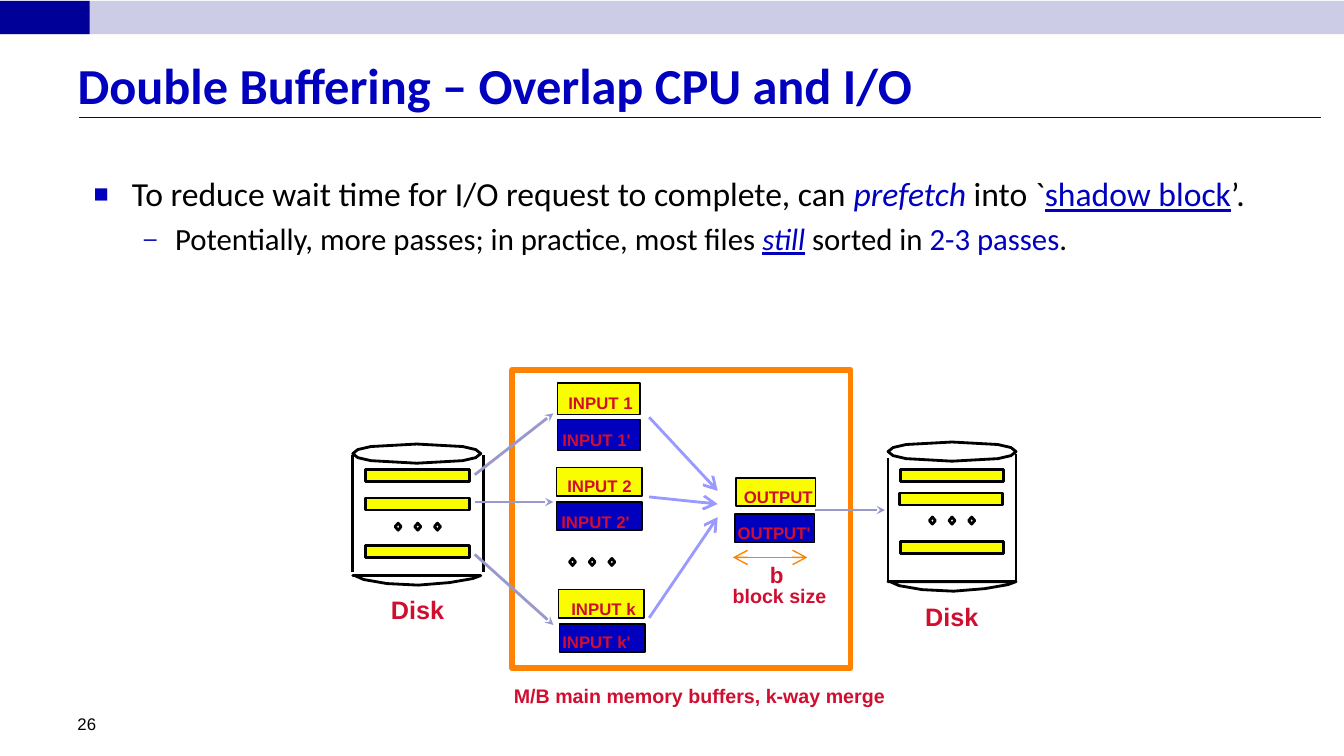
import pptx
import pptx.dml.color
import pptx.enum.shapes
import pptx.enum.text
import pptx.oxml
import pptx.oxml.ns
import pptx.util
from dataclasses import dataclass


@dataclass(frozen=True)
class Theme:
    blue: str = "0000BE"
    navy: str = "000099"
    band: str = "CCCCE6"
    yellow: str = "FAFD00"
    red: str = "CF0E30"
    orange: str = "FF8200"
    black: str = "000000"
    transfer: str = "9999CC"
    merge: str = "9999FF"
    text_font: str = "Calibri"
    label_font: str = "Arial"
    title_size: int = 36
    small: int = 12
    medium: int = 14
    large: int = 18


THEME = Theme()
CELL = 91440  # the grid has square cells, ten to the inch
COLUMNS, ROWS = 133.33, 75

# Content; every place and size is in columns and rows
TITLE = "Double Buffering – Overlap CPU and I/O"
PLAIN = {"color": THEME.black}
KEY = {"color": THEME.blue}
BULLETS = [
    {"mark": "■", "size": 24, "indent": 3.8, "hanging": 3.8, "runs": [
        ("To reduce wait time for I/O request to complete, can ", PLAIN),
        ("prefetch", KEY | {"italic": True}),
        (" into `", PLAIN),
        ("shadow block", KEY | {"underline": True}),
        ("’.", PLAIN)]},
    {"mark": "–", "size": 22, "indent": 8.1, "hanging": 3.1, "runs": [
        ("Potentially, more passes; in practice, most files ", PLAIN),
        ("still", KEY | {"italic": True, "underline": True}),
        (" sorted in ", PLAIN),
        ("2-3 passes", KEY),
        (".", PLAIN)]},
]
# Buffer pair: name, box width and height, then box and label corners of
# the working buffer and of its shadow
BUFFERS = [
    ("INPUT 1", 8.2, 3.1, (55.3, 38), (55.4, 38.5), (55.3, 41.6), (54.8, 42.1)),
    ("INPUT 2", 8.5, 2.8, (55.2, 46.4), (55.3, 46.7), (55.2, 49.8), (54.7, 50.3)),
    ("INPUT k", 8.5, 2.8, (55.4, 58.5), (55.7, 58.9), (55.5, 61.9), (54.8, 62.2)),
    ("OUTPUT", 7.9, 2.8, (73, 47.4), (72.8, 47.8), (72.9, 51), (72.2, 51.4)),
]
LABEL_WIDTHS = {"INPUT": (8.4, 8.9), "OUTPUT": (8.9, 9.3)}
DISKS = [
    {"left": 35, "lid": 45, "base": 57.1, "walls": [(35, 45.1, 56.7), (48, 45.1, 56.7)],
     "records": [(36.3, 46.6), (36.3, 49.4), (36.3, 54.1)],
     "dots": (39.2, 51.9), "label": (37.8, 58.5)},
    {"left": 88.1, "lid": 44.8, "base": 57.7, "walls": [(88.1, 45.4, 57.6), (100.8, 45, 57.6)],
     "records": [(89.3, 46.6), (89.2, 48.9), (89.3, 53.7)],
     "dots": (92.2, 51.3), "label": (90.8, 59.2)},
]
LID_EDGE = [(12.7, 0), (12.2, 0.4), (10.9, 0.7), (6.35, 0.95), (1.8, 0.7), (0.5, 0.4), (0, 0)]
BASE_EDGE = [(0, 0), (0.2, 0), (1.1, 0.4), (3.4, 0.8), (6.5, 0.95),
             (9.6, 0.7), (11.9, 0.3), (12.7, 0)]
INPUT_DOTS = (56.5, 55.4)
MEMORY = (50.8, 36.7, 33.6, 29.6)
TRANSFERS = [(47.1, 47.1, 54.9, 41), (47.1, 49.8, 54.9, 49.8),
             (47.1, 55, 54.9, 62), (80.9, 50.6, 87.8, 50.6)]
MERGES = [(64.4, 41.4, 71.2, 48.7), (64.4, 49.3, 71.2, 50), (64.4, 61.3, 71.2, 51.3)]
BLOCK_WIDTH = (72.7, 55.3, 80.1, 55.3)
CAPTIONS = [
    ("block size", (71.7, 57.4, 11.3, 3.3), THEME.medium),
    ("b", (75.4, 55.2, 3.4, 3.7), 16),
    ("M/B main memory buffers, k-way merge", (50, 67.4, 39, 3.3), THEME.medium),
]
PAGE_NUMBER = ("26", (6.7, 68.3, 31.1, 5))


def cells(*values):
    return [pptx.util.Emu(round(value * CELL)) for value in values]


def rgb(color):
    return pptx.dml.color.RGBColor.from_string(color)


def add_xml(parent, tag, **attributes):
    element = pptx.oxml.parse_xml(f"<a:{tag} {pptx.oxml.ns.nsdecls('a')}/>")
    for name, value in attributes.items():
        element.set(name, str(value))
    parent.append(element)
    return element


def paint(shape, fill, line, weight):
    shape.shadow.inherit = False
    if fill:
        shape.fill.solid()
        shape.fill.fore_color.rgb = rgb(fill)
    else:
        shape.fill.background()
    if line:
        shape.line.color.rgb = rgb(line)
        shape.line.width = pptx.util.Pt(weight)
    else:
        shape.line.fill.background()


def add_box(slide, place, fill=None, line=THEME.black, weight=2, kind="RECTANGLE"):
    preset = getattr(pptx.enum.shapes.MSO_SHAPE, kind)
    paint(slide.shapes.add_shape(preset, *cells(*place)), fill, line, weight)


def add_outline(slide, points):
    corners = [cells(*point) for point in points]
    builder = slide.shapes.build_freeform(*corners[0], scale=1.0)
    builder.add_line_segments(corners[1:], close=True)
    paint(builder.convert_to_shape(), None, THEME.black, 2)


def add_line(slide, ends, color, weight, **arrowheads):
    connector = slide.shapes.add_connector(
        pptx.enum.shapes.MSO_CONNECTOR.STRAIGHT, *cells(*ends))
    connector.line.color.rgb = rgb(color)
    connector.line.width = pptx.util.Pt(weight)
    properties = connector._element.spPr
    for tag, kind in arrowheads.items():
        size = "med" if kind == "stealth" else "lg"
        add_xml(properties.find(pptx.oxml.ns.qn("a:ln")), tag, type=kind, w=size, len=size)
    add_xml(properties, "effectLst")


def add_run(paragraph, text, font, size, color, **styles):
    run = paragraph.add_run()
    run.text = text
    run.font.color.rgb = rgb(color)
    styles |= {"name": font, "size": pptx.util.Pt(size)}
    for name, value in styles.items():
        setattr(run.font, name, value)


def add_text(slide, place, wrap=True):
    frame = slide.shapes.add_textbox(*cells(*place)).text_frame
    frame.word_wrap = wrap
    if not wrap:
        frame.auto_size = pptx.enum.text.MSO_AUTO_SIZE.SHAPE_TO_FIT_TEXT
    return frame


def add_label(slide, text, place, size):
    frame = add_text(slide, place, wrap=False)
    add_run(frame.paragraphs[0], text, THEME.label_font, size, THEME.red, bold=True)


def add_dots(slide, left, top):
    for index in range(3):
        add_box(slide, (left + 1.95 * index, top, 0.6, 0.7), kind="DIAMOND")


def add_heading(slide):
    add_box(slide, (0, 0.1, COLUMNS, 3.3), THEME.band, None)
    add_box(slide, (0, 0.1, 8.9, 3.3), THEME.navy, None)
    add_line(slide, (7.8, 11.7, 131.1, 11.7), THEME.navy, 0.75)
    title = slide.shapes.title
    title.left, title.top, title.width, title.height = cells(6.7, 2.3, 98.3, 12.1)
    title.text_frame.vertical_anchor = pptx.enum.text.MSO_ANCHOR.MIDDLE
    paragraph = title.text_frame.paragraphs[0]
    paragraph.alignment = pptx.enum.text.PP_ALIGN.LEFT
    add_run(paragraph, TITLE, THEME.text_font, THEME.title_size, THEME.blue, bold=True)


def add_bullets(slide):
    frame = add_text(slide, (8.3, 16.7, 122.5, 44.6))
    for index, item in enumerate(BULLETS):
        paragraph = frame.add_paragraph() if index else frame.paragraphs[0]
        paragraph.level = index
        paragraph.space_before = pptx.util.Pt(0.2 * item["size"])
        properties = paragraph._p.get_or_add_pPr()
        indent, hanging = cells(item["indent"], item["hanging"])
        properties.set("marL", str(indent))
        properties.set("indent", str(-hanging))
        add_xml(add_xml(properties, "buClr"), "srgbClr", val=THEME.blue)
        add_xml(properties, "buSzPct", val=75000)
        add_xml(properties, "buFont", typeface=THEME.label_font)
        add_xml(properties, "buChar", char=item["mark"])
        for text, styles in item["runs"]:
            add_run(paragraph, text, THEME.text_font, item["size"], **styles)


def add_disk(slide, disk):
    left, lid, base = disk["left"], disk["lid"], disk["base"]
    upper = [(left + x, lid - y) for x, y in LID_EDGE]
    lower = [(left + x, lid + y) for x, y in LID_EDGE[-2:0:-1]]
    add_outline(slide, upper + lower)
    add_outline(slide, [(left + x, base + y) for x, y in BASE_EDGE])
    for x, top, bottom in disk["walls"]:
        add_line(slide, (x, top, x, bottom), THEME.black, 2)
    for corner in disk["records"]:
        add_box(slide, (*corner, 10.3, 1.2), THEME.yellow)
    add_dots(slide, *disk["dots"])
    add_label(slide, "Disk", (*disk["label"], 7.3, 4), THEME.large)


def add_buffers(slide):
    for name, width, height, *corners in BUFFERS:
        kinds = zip((name, name + "'"), (THEME.yellow, THEME.blue),
                    corners[::2], corners[1::2], LABEL_WIDTHS[name.split()[0]])
        for text, fill, box, label, label_width in kinds:
            add_box(slide, (*box, width, height), fill, weight=1)
            add_label(slide, text, (*label, label_width, 3), THEME.small)


def main():
    presentation = pptx.Presentation()
    presentation.slide_width, presentation.slide_height = cells(COLUMNS, ROWS)
    slide = presentation.slides.add_slide(presentation.slide_layouts[5])
    add_heading(slide)
    add_bullets(slide)
    # Merge diagram
    for disk in DISKS:
        add_disk(slide, disk)
    add_box(slide, MEMORY, line=THEME.orange, weight=4)
    add_buffers(slide)
    add_dots(slide, *INPUT_DOTS)
    for ends in MERGES:
        add_line(slide, ends, THEME.merge, 2, tailEnd="arrow")
    for ends in TRANSFERS:
        add_line(slide, ends, THEME.transfer, 2, tailEnd="stealth")
    add_line(slide, BLOCK_WIDTH, THEME.orange, 1, headEnd="arrow", tailEnd="arrow")
    for text, place, size in CAPTIONS:
        add_label(slide, text, place, size)
    # Page number
    number, place = PAGE_NUMBER
    frame = add_text(slide, place)
    frame.vertical_anchor = pptx.enum.text.MSO_ANCHOR.BOTTOM
    add_run(frame.paragraphs[0], number, THEME.label_font, THEME.small, THEME.black)
    presentation.save("out.pptx")


if __name__ == "__main__":
    main()
